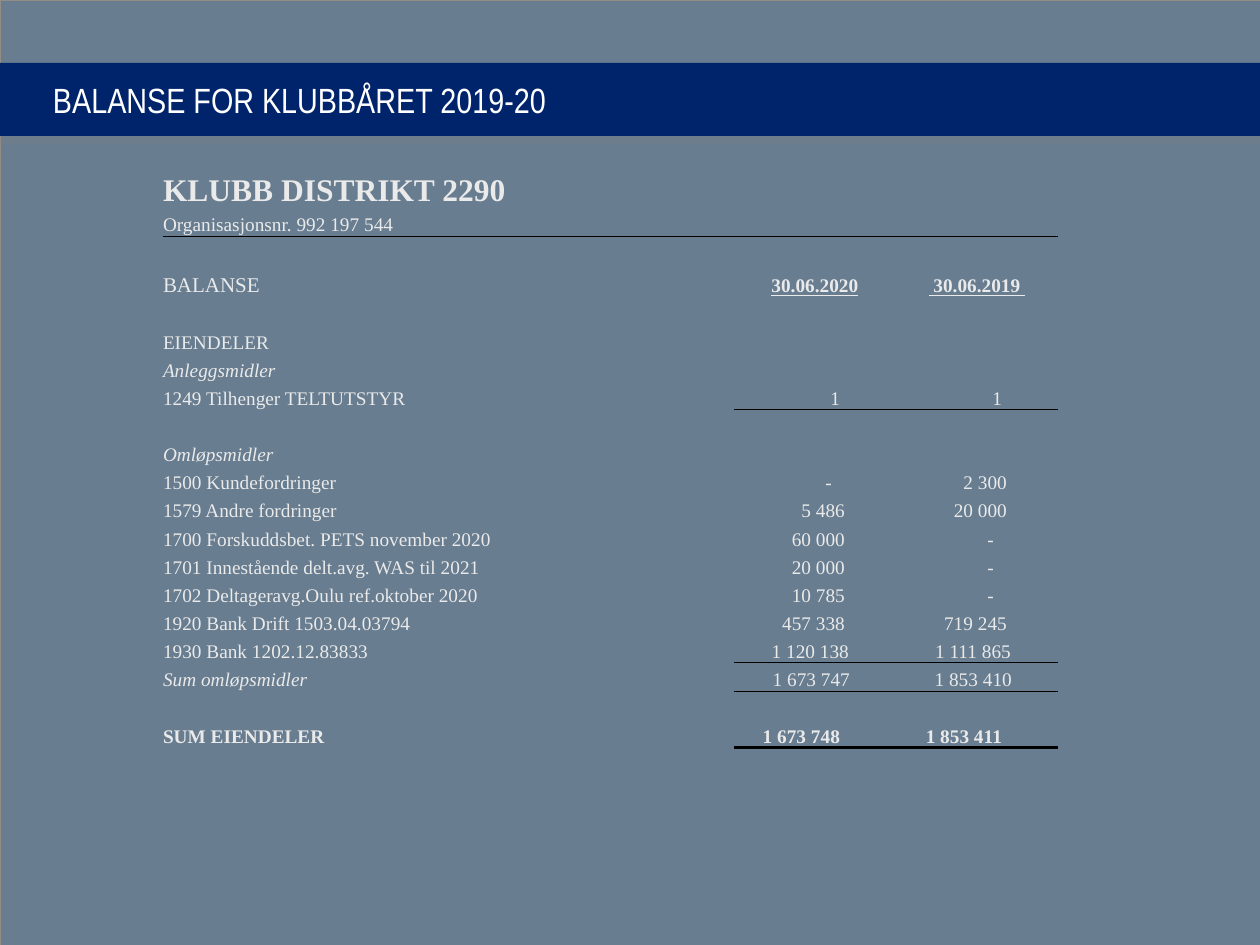
from lxml import etree
from pptx import Presentation
from pptx.dml.color import RGBColor
from pptx.enum.shapes import MSO_SHAPE
from pptx.enum.text import MSO_ANCHOR, PP_ALIGN
from pptx.oxml.ns import qn
from pptx.util import Pt

RECTANGLE = MSO_SHAPE.RECTANGLE
MIDDLE, BOTTOM = MSO_ANCHOR.MIDDLE, MSO_ANCHOR.BOTTOM
LEFT, CENTER, RIGHT = PP_ALIGN.LEFT, PP_ALIGN.CENTER, PP_ALIGN.RIGHT

EMU_PER_PX = 914400 / 126
COLORS = {
    "background": "687D90",
    "frame": "958D85",
    "band": "00246C",
    "shadow": "808080",
    "title": "FFFFFF",
    "text": "EAEAEA",
    "rule": "000000",
}
NO_STYLE = "{2D5ABB26-0587-4C30-8999-92F81FD0307C}"
COLUMNS = (510, 61, 162, 162)
NAME_ROW, BALANCE_ROW = 0, 3
NAME_HEIGHT, BALANCE_HEIGHT = 43, 33
DASH_INDENT = 64

ROWS = [
    ("KLUBB DISTRIKT 2290", (), dict(size=18, bold=True)),
    ("Organisasjonsnr. 992 197 544", (), dict(rule=0.5, rule_from=0)),
    None,
    ("BALANSE", ("30.06.2020", " 30.06.2019 "), dict(size=12, heading=True)),
    None,
    ("EIENDELER", (), {}),
    ("Anleggsmidler", (), dict(italic=True)),
    ("1249 Tilhenger TELTUTSTYR", ("1", "1"), dict(rule=0.5, indent=56)),
    None,
    ("Omløpsmidler", (), dict(italic=True)),
    ("1500 Kundefordringer", ("-", "2 300"), {}),
    ("1579 Andre fordringer", ("5 486", "20 000"), {}),
    ("1700 Forskuddsbet. PETS november 2020", ("60 000", "-"), {}),
    ("1701 Innestående delt.avg. WAS til 2021", ("20 000", "-"), {}),
    ("1702 Deltageravg.Oulu ref.oktober 2020", ("10 785", "-"), {}),
    ("1920 Bank Drift 1503.04.03794", ("457 338", "719 245"), {}),
    ("1930 Bank 1202.12.83833", ("1 120 138", "1 111 865"), dict(rule=0.5, indent=47)),
    ("Sum omløpsmidler", ("1 673 747", "1 853 410"),
     dict(rule=0.5, indent=46, italic=True)),
    None,
    ("SUM EIENDELER", ("1 673 748", "1 853 411"),
     dict(rule=2, indent=56, bold=True, bold_amounts=True)),
]


def px(length):
    return round(length * EMU_PER_PX)


def color(name):
    return RGBColor.from_string(COLORS[name])


def add_element(parent, tag, **attributes):
    return etree.SubElement(parent, qn(tag), {k: str(v) for k, v in attributes.items()})


def write(frame, text, size=11, font="Times New Roman", tint="text", bold=False,
          italic=False, underline=False, align=LEFT):
    para = frame.paragraphs[0]
    para.alignment = align
    span = para.add_run()
    span.text = text
    span.font.size = Pt(size)
    span.font.name = font
    span.font.bold = bold
    span.font.italic = italic
    span.font.underline = underline
    span.font.color.rgb = color(tint)


def add_frame(page, left, top, width, height):
    box = page.shapes.add_shape(RECTANGLE, px(left), px(top), px(width), px(height))
    box.shadow.inherit = False
    box.fill.background()
    box.line.color.rgb = color("frame")
    box.line.width = Pt(0.25)


def add_title_band(page, left, top, width, height):
    band = page.shapes.add_shape(RECTANGLE, px(left), px(top), px(width), px(height))
    band.shadow.inherit = False
    band.fill.solid()
    band.fill.fore_color.rgb = color("band")
    band.line.fill.background()
    effects = band._element.spPr.find(qn("a:effectLst"))
    shadow = add_element(effects, "a:outerShdw", blurRad=0, dist=Pt(4.8),
                         dir=5400000, algn="t", rotWithShape=0)
    tint = add_element(shadow, "a:srgbClr", val=COLORS["shadow"])
    add_element(tint, "a:alpha", val=25000)

    title = page.shapes.title
    title.left, title.top = px(left + 63), px(top)
    title.width, title.height = px(width - 74), px(height)
    frame = title.text_frame
    frame.margin_left = frame.margin_right = frame.margin_top = frame.margin_bottom = 0
    frame.vertical_anchor = MIDDLE
    frame.word_wrap = True
    write(frame, "BALANSE FOR KLUBBÅRET 2019-20", size=20, font="Arial Narrow", tint="title")
    page.shapes._spTree.append(title._element)


def add_bottom_rule(cell, width):
    line = etree.Element(qn("a:lnB"), {"w": str(Pt(width)), "cmpd": "sng"})
    fill = add_element(line, "a:solidFill")
    add_element(fill, "a:srgbClr", val=COLORS["rule"])
    cell._tc.get_or_add_tcPr().insert(0, line)


def clear_cell(cell):
    cell.margin_left = cell.margin_right = cell.margin_top = cell.margin_bottom = 0
    cell.vertical_anchor = BOTTOM
    cell.fill.background()
    cell.text_frame.paragraphs[0]._p.get_or_add_endParaRPr().set("sz", "1100")


def fill_row(cells, label, amounts, size=11, bold=False, italic=False, heading=False,
             bold_amounts=False, indent=51, rule=None, rule_from=2):
    write(cells[0].text_frame, label, size=size, bold=bold, italic=italic)
    for cell, amount in zip(cells[2:], amounts):
        if heading:
            write(cell.text_frame, amount, bold=True, underline=True, align=CENTER)
        else:
            cell.margin_right = px(DASH_INDENT if amount == "-" else indent)
            write(cell.text_frame, amount, bold=bold_amounts, align=RIGHT)
    if rule:
        for cell in cells[rule_from:]:
            add_bottom_rule(cell, rule)


def add_balance_table(page, left, top, width, height):
    table = page.shapes.add_table(len(ROWS), len(COLUMNS), px(left), px(top),
                                  px(width), px(height)).table
    table.first_row = table.horz_banding = False
    table._tbl.tblPr.find(qn("a:tableStyleId")).text = NO_STYLE
    for column, column_width in zip(table.columns, COLUMNS):
        column.width = px(column_width)
    for row in table.rows:
        row.height = px(height - NAME_HEIGHT - BALANCE_HEIGHT) // (len(ROWS) - 2)
    table.rows[NAME_ROW].height = px(NAME_HEIGHT)
    table.rows[BALANCE_ROW].height = px(BALANCE_HEIGHT)
    table.cell(NAME_ROW, 0).merge(table.cell(NAME_ROW, 1))
    for row, content in zip(table.rows, ROWS):
        cells = list(row.cells)
        for cell in cells:
            clear_cell(cell)
        if content:
            label, amounts, style = content
            fill_row(cells, label, amounts, **style)


def main():
    deck = Presentation()
    deck.slide_width, deck.slide_height = px(1260), px(945)
    page = deck.slides.add_slide(deck.slide_layouts[5])
    page.background.fill.solid()
    page.background.fill.fore_color.rgb = color("background")
    add_frame(page, 0, 0, 1260, 945)
    add_title_band(page, -10, 63, 1281, 73)
    add_balance_table(page, 163, 165, sum(COLUMNS), 583)
    deck.save("out.pptx")


if __name__ == "__main__":
    main()
